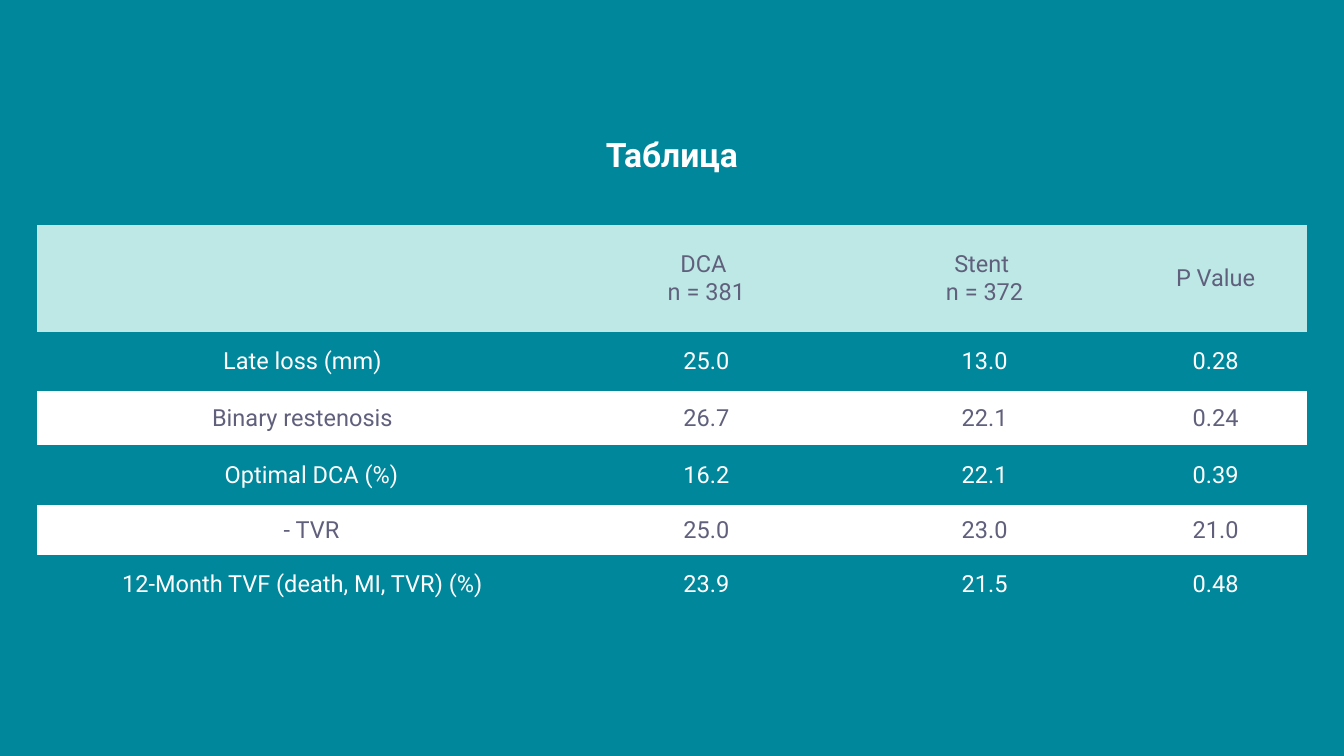
from pptx import Presentation
from pptx.dml.color import RGBColor
from pptx.enum.text import MSO_ANCHOR, PP_ALIGN
from pptx.oxml.ns import qn
from pptx.util import Inches, Pt

TEAL = RGBColor(0x00, 0x87, 0x9B)
MINT = RGBColor(0xBE, 0xE8, 0xE6)
SLATE = RGBColor(0x60, 0x60, 0x7D)
WHITE = RGBColor(0xFF, 0xFF, 0xFF)

NO_GRID_STYLE = "{2D5ABB26-0587-4C30-8999-92F81FD0307C}"
INDENT = 0.15
COLUMN_SHARES = [39.51, 20.61, 20.79, 13.59]
ROW_SHARES = [14.08, 7.84, 7.2, 7.84, 6.72, 7.68]
ROWS = [
    ["", "DCA \vn = 381", "Stent \vn = 372", "P Value"],
    ["Late loss (mm)", "25.0", "13.0", "0.28"],
    ["Binary restenosis", "26.7", "22.1", "0.24"],
    ["Optimal DCA (%)", "16.2", "22.1", "0.39"],
    ["- TVR", "25.0", "23.0", "21.0"],
    ["12-Month TVF (death, MI, TVR) (%)", "23.9", "21.5", "0.48"],
]
INDENTED_ROWS = {3, 4}


def set_attrs(target, values):
    for name, value in values.items():
        setattr(target, name, value)


class SlideBuilder:
    font = "Roboto"

    def __init__(self, prs, background):
        self.prs = prs
        self.slide = prs.slides.add_slide(prs.slide_layouts[6])
        fill = self.slide.background.fill
        fill.solid()
        fill.fore_color.rgb = background

    def x(self, percent):
        return round(self.prs.slide_width * percent / 100)

    def y(self, percent):
        return round(self.prs.slide_height * percent / 100)

    def text(self, tf, text, size, color, bold=False, spacing=1.0):
        p = tf.paragraphs[0]
        p.text = text
        set_attrs(p, {"alignment": PP_ALIGN.CENTER, "line_spacing": spacing})
        for r in p.runs:
            set_attrs(r.font, {"name": self.font, "size": Pt(size), "bold": bold})
            r.font.color.rgb = color

    def title(self, text, top, height):
        sp = self.slide.shapes.add_textbox(0, self.y(top), self.x(100), self.y(height))
        tf = sp.text_frame
        set_attrs(tf, {"word_wrap": True, "vertical_anchor": MSO_ANCHOR.MIDDLE})
        sides = ("left", "right", "top", "bottom")
        set_attrs(tf, {f"margin_{side}": Inches(0.05) for side in sides})
        self.text(tf, text, 20, WHITE, bold=True, spacing=0.9)

    def cell(self, cell, text, fill, color, indent):
        set_attrs(cell, {
            "vertical_anchor": MSO_ANCHOR.MIDDLE,
            "margin_left": Inches(0.11 + indent),
            "margin_right": Inches(0.11),
            "margin_top": Inches(0.06),
            "margin_bottom": Inches(0.06),
        })
        if fill is None:
            cell.fill.background()
        else:
            cell.fill.solid()
            cell.fill.fore_color.rgb = fill
        self.text(cell.text_frame, text, 14, color)

    def table(self, rows, left, top, column_shares, row_shares):
        sp = self.slide.shapes.add_table(
            len(rows), len(column_shares), self.x(left), self.y(top),
            self.x(sum(column_shares)), self.y(sum(row_shares)))
        sp._element.find(".//" + qn("a:tableStyleId")).text = NO_GRID_STYLE
        table = sp.table
        set_attrs(table, {"first_row": False, "horz_banding": False})
        for column, share in zip(table.columns, column_shares):
            column.width = self.x(share)
        for i, (row, share) in enumerate(zip(rows, row_shares)):
            table.rows[i].height = self.y(share)
            if i % 2:
                fill, color = None, WHITE
            else:
                fill, color = WHITE if i else MINT, SLATE
            for j, text in enumerate(row):
                indent = INDENT if j == 0 and i in INDENTED_ROWS else 0
                self.cell(table.cell(i, j), text, fill, color, indent)


def main():
    prs = Presentation()
    set_attrs(prs, {"slide_width": Inches(11.11), "slide_height": Inches(6.25)})
    s = SlideBuilder(prs, TEAL)
    s.title("Таблица", 16, 9.44)
    s.table(ROWS, 2.75, 29.8, COLUMN_SHARES, ROW_SHARES)
    prs.save("out.pptx")


if __name__ == "__main__":
    main()
